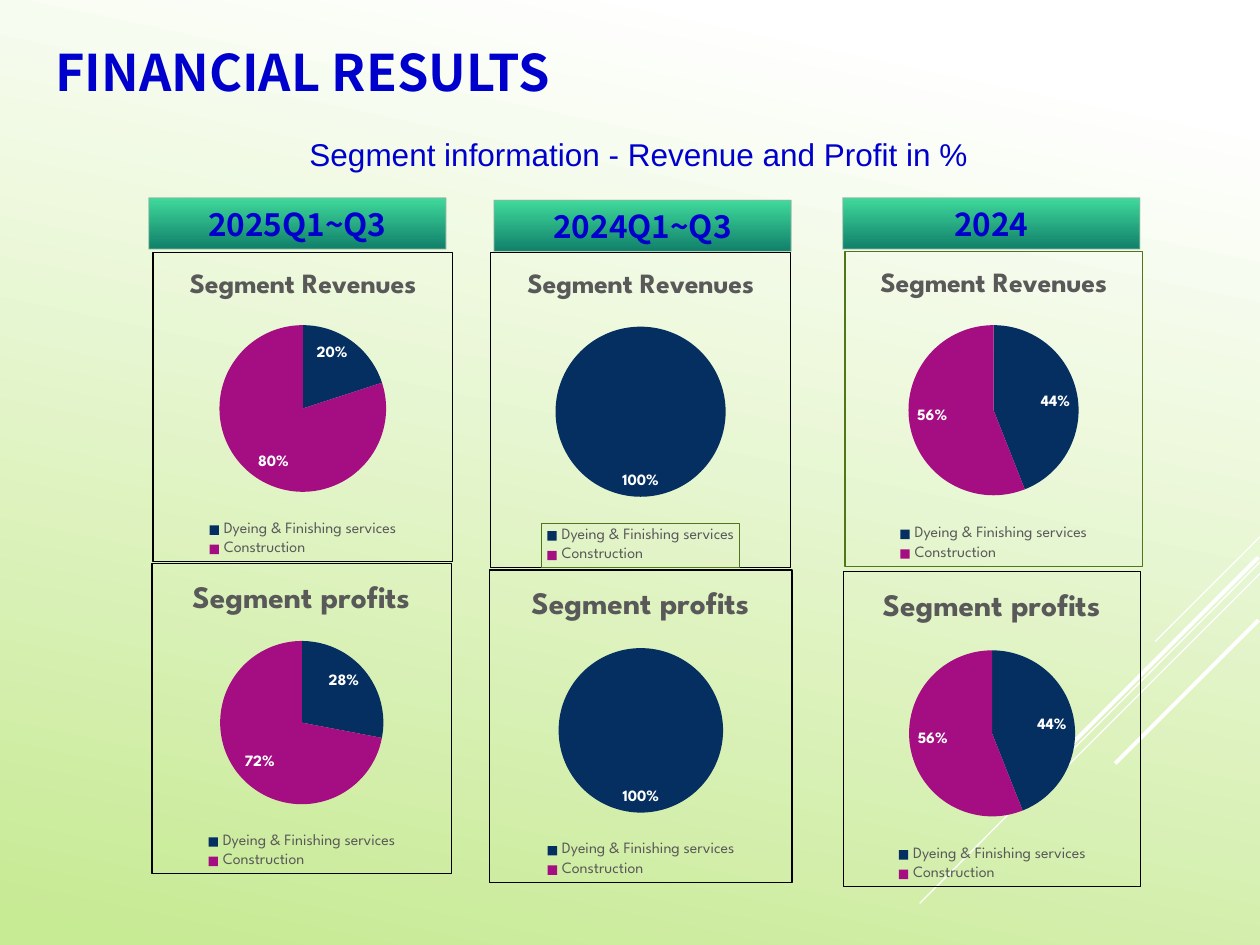
"""Build the slide of segment revenue and profit shares by period."""
from lxml.etree import SubElement
from pptx import Presentation
from pptx.chart.data import CategoryChartData
from pptx.dml.color import RGBColor
from pptx.enum.chart import XL_CHART_TYPE as ChartType, XL_LABEL_POSITION as LabelPos
from pptx.enum.chart import XL_LEGEND_POSITION as LegendPos
from pptx.enum.shapes import MSO_CONNECTOR as Connector, MSO_SHAPE as Shape
from pptx.enum.text import MSO_ANCHOR as Anchor, PP_ALIGN as Align
from pptx.oxml import parse_xml
from pptx.oxml.ns import nsdecls, qn
from pptx.util import Cm, Pt

BLUE = RGBColor(0x00, 0x00, 0xCC)
WHITE = RGBColor(0xFF, 0xFF, 0xFF)
LIME = RGBColor(0xC7, 0xEA, 0x94)
MINT = RGBColor(0x3F, 0xD9, 0x9B)
TEAL = RGBColor(0x11, 0x80, 0x6A)
SAGE = RGBColor(0x8A, 0xB7, 0xA1)
GREY = RGBColor(0x59, 0x59, 0x59)
NAVY = RGBColor(0x05, 0x2F, 0x61)
PLUM = RGBColor(0xA5, 0x0E, 0x82)
BLACK = RGBColor(0x00, 0x00, 0x00)
OLIVE = RGBColor(0x4F, 0x77, 0x17)
HEADING_FONT, CHART_FONT = "Noto Sans CJK SC", "League Spartan"

TITLE = "FINANCIAL RESULTS"
SUBTITLE = "Segment information - Revenue and Profit in %"
SEGMENTS = ["Dyeing & Finishing services", "Construction"]
REVENUES = {"name": "Segment Revenues", "size": 16, "pie": (0.235, 0.54)}
PROFITS = {"name": "Segment profits", "size": 18, "pie": (0.25, 0.527)}
PERIODS = [
    ("2025Q1~Q3", (3, 3.99), [
        (REVENUES, (20, 80), (3.07, 5.08, 6.07, 6.25), BLACK, None),
        (PROFITS, (-28, 72), (3.05, 11.35, 6.07, 6.27), BLACK, None)]),
    ("2024Q1~Q3", (9.96, 4.04), [
        (REVENUES, (100, 0), (9.88, 5.08, 6.07, 6.38), BLACK, OLIVE),
        (PROFITS, (-100, 0), (9.86, 11.48, 6.12, 6.32), BLACK, None)]),
    ("2024", (16.99, 3.99), [
        (REVENUES, (44, 56), (17.02, 5.05, 6.02, 6.38), OLIVE, None),
        (PROFITS, (-44, 56), (16.99, 11.51, 6.02, 6.38), BLACK, None)]),
]
STREAKS = [
    ((25.4, 10.82, 23.29, 12.93), 0.75),
    ((25.4, 11.33, 18.54, 18.21), 0.75),
    ((25.4, 11.56, 21.03, 15.93), 0.75),
    ((25.37, 11.23, 21.39, 15.21), 2.25),
    ((25.37, 12.5, 22.48, 15.39), 2.25),
]


def style(font, name, size, color, bold=False):
    font.name, font.size, font.bold = name, Pt(size), bold
    font.color.rgb = color


def blend(fill, stops, angle):
    fill.gradient()
    fill.gradient_angle = 360 - angle
    for stop, (position, color) in zip(fill.gradient_stops, stops):
        stop.position, stop.color.rgb = position, color


def write(shape, text, *font, align=Align.LEFT):
    frame = shape.text_frame
    frame.word_wrap, frame.vertical_anchor = True, Anchor.MIDDLE
    paragraph = frame.paragraphs[0]
    paragraph.text, paragraph.alignment = text, align
    style(paragraph.font, *font)


def outline(color):
    return parse_xml(
        f'<c:spPr {nsdecls("c", "a")}><a:noFill/><a:ln w="9525"><a:solidFill>'
        f'<a:srgbClr val="{color}"/></a:solidFill></a:ln></c:spPr>')


def place(part, index, inner, *box):
    for old in part.findall(qn("c:layout")):
        part.remove(old)
    target = '<c:layoutTarget val="inner"/>' if inner else ""
    sizes = "".join(f'<c:{key} val="{value}"/>' for key, value in zip("xywh", box))
    part.insert(index, parse_xml(
        f'<c:layout {nsdecls("c")}><c:manualLayout>{target}<c:xMode val="edge"/>'
        f'<c:yMode val="edge"/>{sizes}</c:manualLayout></c:layout>'))


def add_pie(slide, measure, values, box, border, legend_border):
    data = CategoryChartData()
    data.categories = SEGMENTS
    data.add_series(measure["name"], values)
    chart = slide.shapes.add_chart(ChartType.PIE, *map(Cm, box), data).chart
    style(chart.font, CHART_FONT, 10, WHITE)

    chart.has_title = True
    heading = chart.chart_title.text_frame.paragraphs[0]
    heading.text = measure["name"]
    style(heading.font, CHART_FONT, measure["size"], GREY, True)

    chart.has_legend = True
    legend = chart.legend
    legend.position, legend.include_in_layout = LegendPos.BOTTOM, False
    style(legend.font, CHART_FONT, 9, GREY)

    plot = chart.plots[0]
    plot.vary_by_categories = True
    points = plot.series[0].points
    for index, color in enumerate((NAVY, PLUM)):
        fill = points[index].format.fill
        fill.solid()
        fill.fore_color.rgb = color
    labels = plot.series[0].data_labels
    labels.show_percentage, labels.show_value = True, False
    labels.number_format, labels.number_format_is_linked = "0%", False
    labels.position = LabelPos.INSIDE_END
    style(labels.font, CHART_FONT, 9, WHITE, True)

    space = chart._chartSpace
    for index, value in enumerate(values):
        if value == 0:
            hidden = parse_xml(f'<c:dLbl {nsdecls("c")}><c:idx val="{index}"/>'
                               '<c:delete val="1"/></c:dLbl>')
            space.find(".//" + qn("c:dLbls")).insert(0, hidden)
    top, height = measure["pie"]
    place(space.find(".//" + qn("c:plotArea")), 0, True, 0.1, top, 0.8, height)
    key = space.find(".//" + qn("c:legend"))
    place(key, 1, False, 0.17, 0.86, 0.66, 0.14)
    if legend_border:
        key.find(qn("c:txPr")).addprevious(outline(legend_border))
    space.find(qn("c:chart")).addnext(outline(border))


def add_header(slide, period, corner):
    header = slide.shapes.add_shape(Shape.RECTANGLE, *map(Cm, (*corner, 5.99, 1.03)))
    header.shadow.inherit = False
    blend(header.fill, ((0, MINT), (1, TEAL)), 90)
    header.line.color.rgb, header.line.width = SAGE, Pt(0.75)
    tint = header.line._ln.find(".//" + qn("a:srgbClr"))
    SubElement(tint, qn("a:alpha"), val="60000")
    write(header, period, HEADING_FONT, 18, BLUE, True, align=Align.CENTER)


def main():
    deck = Presentation()
    deck.slide_width, deck.slide_height = Cm(25.4), Cm(19.05)
    slide = deck.slides.add_slide(deck.slide_layouts[5])
    blend(slide.background.fill, ((0.1, WHITE), (0.98, LIME)), 102)

    for ends, width in STREAKS:
        streak = slide.shapes.add_connector(Connector.STRAIGHT, *map(Cm, ends))
        streak.line.color.rgb, streak.line.width = WHITE, Pt(width)
        SubElement(streak._element.spPr, qn("a:effectLst"))

    title = slide.shapes.title
    title.left, title.top, title.width, title.height = map(Cm, (0.86, 0.71, 23.72, 1.45))
    write(title, TITLE, HEADING_FONT, 28.8, BLUE, True)
    subtitle = slide.shapes.add_textbox(*map(Cm, (5.99, 2.59, 14.6, 1.03)))
    write(subtitle, SUBTITLE, "Arial", 18, BLUE)

    for period, corner, pies in PERIODS:
        add_header(slide, period, corner)
        for pie in pies:
            add_pie(slide, *pie)
    deck.save("out.pptx")


if __name__ == "__main__":
    main()
